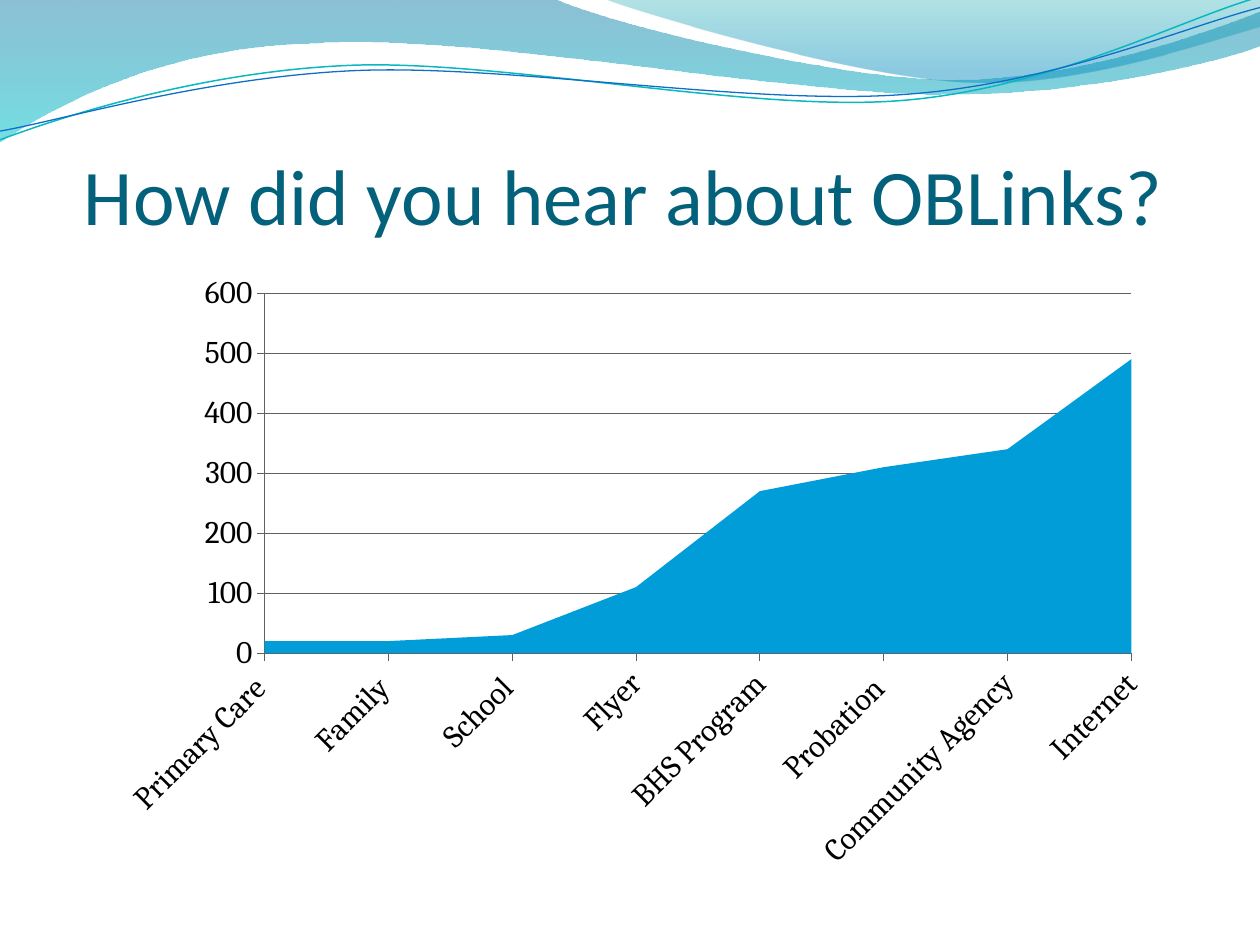
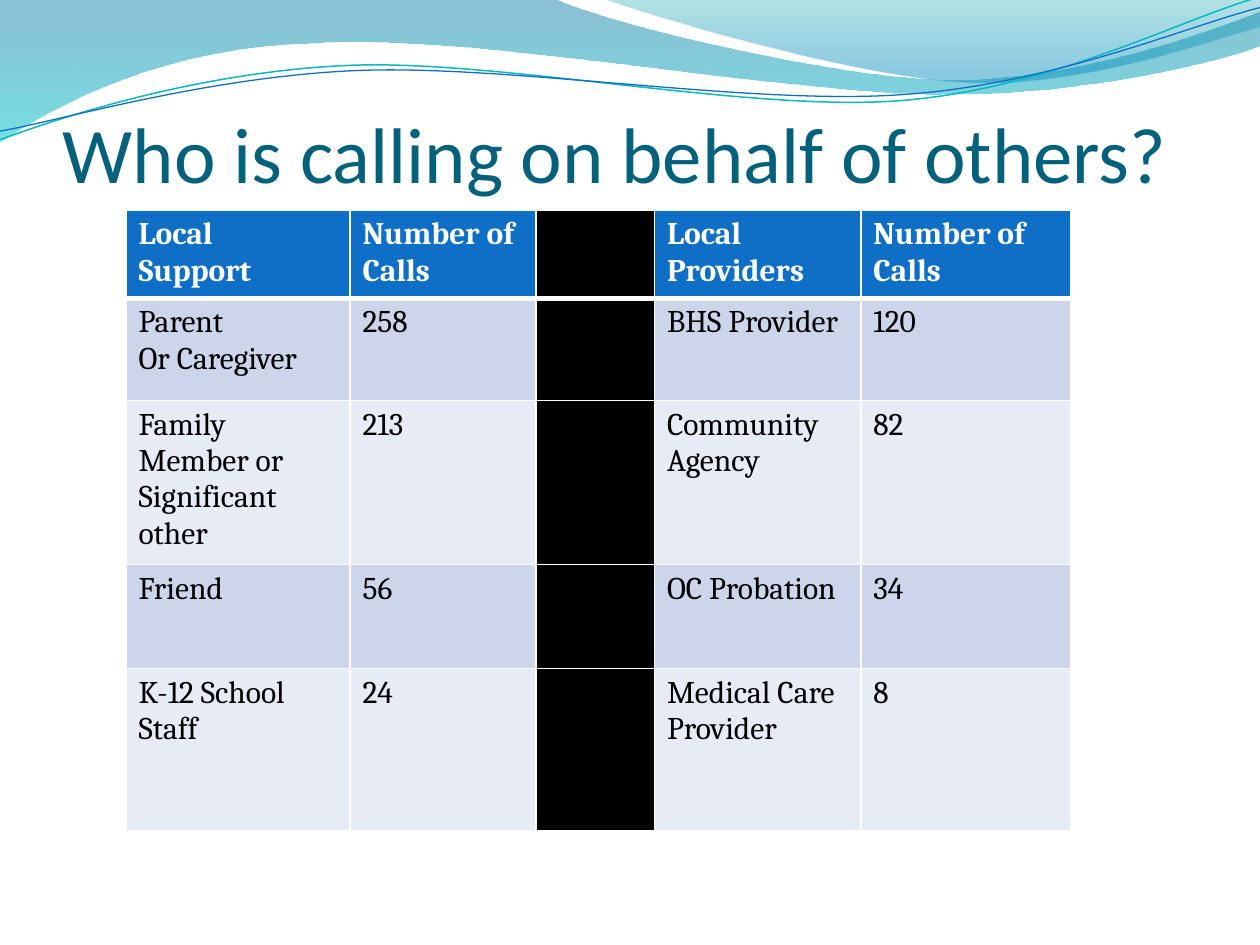
from lxml import etree
from pptx import Presentation
from pptx.chart.data import CategoryChartData
from pptx.dml.color import RGBColor
from pptx.enum.chart import XL_CHART_TYPE, XL_TICK_MARK
from pptx.enum.text import MSO_ANCHOR
from pptx.oxml import parse_xml
from pptx.oxml.ns import nsdecls, qn
from pptx.util import Pt

AREA = XL_CHART_TYPE.AREA
TICK_OUTSIDE = XL_TICK_MARK.OUTSIDE
ANCHOR_BOTTOM = MSO_ANCHOR.BOTTOM

WHITE = RGBColor(0xFF, 0xFF, 0xFF)
BLACK = RGBColor(0x00, 0x00, 0x00)
TITLE_TEAL = RGBColor(0x04, 0x61, 0x7B)
HEADER_BLUE = RGBColor(0x0F, 0x6F, 0xC6)
AREA_BLUE = RGBColor(0x00, 0x9D, 0xD9)
AXIS_GRAY = RGBColor(0x60, 0x60, 0x60)
LINE_TEAL = RGBColor(0x0A, 0xB8, 0xBF)
ROW_FILLS = (RGBColor(0xCC, 0xD5, 0xEA), RGBColor(0xE7, 0xEB, 0xF5))

TITLE_FORMAT = {"name": "Calibri", "size": Pt(45)}
BODY_FORMAT = {"name": "Cambria", "size": Pt(18)}

SLIDE_BOX = (0, 0, 720, 540)

# Outlines start with a point; two numbers make a line, six a Bézier curve.
# Gradient stops are (position, colour, opacity in percent).
WAVE_BANDS = (
    (
        [(0, 0), (316.8, -0.7),
         (342.7, 12.2, 478.1, 45.4, 545.8, 45.4),
         (614.2, 45.4, 689.8, 18.7, 720, 6.5), (720.7, 25.9),
         (707.8, 31.7, 626.4, 54.7, 537.1, 54),
         (447.8, 54, 275, 20.2, 185, 24.5),
         (92.9, 25.9, 33.1, 59.8, -0.7, 81.4)],
        ((0, RGBColor(0x00, 0x74, 0xA1), 45), (1, RGBColor(0x00, 0xC6, 0xCF), 55)),
    ),
    (
        [(344.9, -0.7),
         (366.5, 7.9, 491, 44.6, 553.7, 46.8),
         (616.3, 49.7, 691.9, 23, 720, 15.1), (720, 0)],
        ((0, RGBColor(0x00, 0xA1, 0xA9), 30), (0.8, RGBColor(0x00, 0x8B, 0xBF), 45)),
    ),
)
WAVE_LINES = (
    (
        [(0, 79.9),
         (34.6, 67, 113.8, 41, 199.4, 37.4),
         (284.4, 33.8, 427, 64.1, 513.4, 57.6),
         (599.8, 51.1, 675.4, 10.8, 718.6, -1.4)],
        LINE_TEAL, 0.85,
    ),
    (
        [(0, 74.9),
         (33.8, 69.1, 118.1, 43.9, 203.8, 40.3),
         (290.2, 36.7, 429.8, 60.5, 516.2, 54),
         (601.9, 48.2, 677.5, 15.1, 720, 4.3)],
        HEADER_BLUE, 0.75,
    ),
)

REFERRALS = {
    "Primary Care ": 20, "Family ": 20, "School ": 30, "Flyer": 110,
    "BHS Program": 270, "Probation ": 310, "Community Agency": 340, "Internet": 490,
}
CALLERS = (
    ("Local\nSupport", "Number of Calls", "", "Local Providers", "Number of Calls"),
    ("Parent\nOr Caregiver", "258", "", "BHS Provider", "120"),
    ("Family Member or Significant other", "213", "", "Community Agency", "82"),
    ("Friend", "56", "", "OC Probation", "34"),
    ("K-12 School Staff", "24", "", "Medical Care Provider", "8"),
)
DIVIDER_COLUMN = 2
COLUMN_SHARES = (1.78, 1.48, 0.94, 1.64, 1.67)
ROW_SHARES = (48.5, 58.5, 92, 59.5, 92.5)


def apply_format(font, values, color):
    for key, value in values.items():
        setattr(font, key, value)
    font.color.rgb = color


def add_outline(slide, box, outline, close):
    """Lay the outline through all its points, then bend each triple into a curve."""
    left, top = box[:2]
    points = [
        (Pt(left + x), Pt(top + y))
        for segment in outline
        for x, y in zip(segment[::2], segment[1::2])
    ]
    builder = slide.shapes.build_freeform(*points[0])
    builder.add_line_segments(points[1:], close=close)
    shape = builder.convert_to_shape()
    shape.shadow.inherit = False

    track = next(shape._element.iter(qn("a:path")))
    steps = iter(track.findall(qn("a:lnTo")))
    for segment in outline[1:]:
        curve = next(steps)
        if len(segment) == 6:
            curve.tag = qn("a:cubicBezTo")
            for step in (next(steps), next(steps)):
                curve.append(step[0])
                track.remove(step)
    return shape


def add_waves(slide, box):
    for outline, stops in WAVE_BANDS:
        band = add_outline(slide, box, outline, close=True)
        band.line.fill.background()
        band.fill.gradient()
        band.fill.gradient_angle = 270
        for stop, (position, color, _) in zip(band.fill.gradient_stops, stops):
            stop.position = position
            stop.color.rgb = color
        colors = band._element.spPr.iter(qn("a:srgbClr"))
        for color, (_, _, opacity) in zip(colors, stops):
            etree.SubElement(color, qn("a:alpha"), val=str(opacity * 1000))
    for outline, color, width in WAVE_LINES:
        wave = add_outline(slide, box, outline, close=False)
        wave.fill.background()
        wave.line.color.rgb = color
        wave.line.width = Pt(width)


def add_title(slide, box, text):
    frame = slide.shapes.add_textbox(*map(Pt, box)).text_frame
    layout = {
        "word_wrap": True, "vertical_anchor": ANCHOR_BOTTOM,
        "margin_left": 0, "margin_right": 0, "margin_top": Pt(3.6), "margin_bottom": 0,
    }
    for key, value in layout.items():
        setattr(frame, key, value)
    run = frame.paragraphs[0].add_run()
    run.text = text
    apply_format(run.font, TITLE_FORMAT, TITLE_TEAL)


def add_referral_chart(slide, box):
    data = CategoryChartData()
    data.categories = list(REFERRALS)
    data.add_series("Series 1", list(REFERRALS.values()))
    chart = slide.shapes.add_chart(AREA, *map(Pt, box), data).chart
    chart.has_legend = False
    chart.has_title = False
    apply_format(chart.font, BODY_FORMAT, BLACK)
    plot = chart.plots[0]
    plot.vary_by_categories = False
    area = plot.series[0].format
    area.fill.solid()
    area.fill.fore_color.rgb = AREA_BLUE

    counts, sources = chart.value_axis, chart.category_axis
    counts.minimum_scale, counts.maximum_scale, counts.major_unit = 0, 600, 100
    counts.has_major_gridlines = True
    for axis in (counts, sources):
        axis.major_tick_mark = TICK_OUTSIDE
        apply_format(axis.tick_labels.font, BODY_FORMAT, BLACK)
    for part in (counts, sources, counts.major_gridlines):
        part.format.line.color.rgb = AXIS_GRAY
        part.format.line.width = Pt(0.5)
    sources._element.find(qn("c:txPr")).find(qn("a:bodyPr")).set("rot", "-2700000")
    counts._element.find(qn("c:crossBetween")).set("val", "midCat")


def add_borders(cell, widths):
    """Draw white cell borders; widths maps a side (L, R, T, B) to points."""
    properties = cell._tc.get_or_add_tcPr()
    for side, width in widths.items():
        properties.append(parse_xml(
            f'<a:ln{side} {nsdecls("a")} w="{Pt(width)}"><a:solidFill>'
            f'<a:srgbClr val="{WHITE}"/></a:solidFill></a:ln{side}>'
        ))


def add_caller_table(slide, box):
    width, height = box[2:]
    table = slide.shapes.add_table(
        len(CALLERS), len(CALLERS[0]), *map(Pt, box)
    ).table
    for column, share in zip(table.columns, COLUMN_SHARES):
        column.width = Pt(width * share / sum(COLUMN_SHARES))
    for row, share in zip(table.rows, ROW_SHARES):
        row.height = Pt(height * share / sum(ROW_SHARES))
    for r, texts in enumerate(CALLERS):
        header = r == 0
        row_fill = HEADER_BLUE if header else ROW_FILLS[(r - 1) % 2]
        borders = {"L": 1, "R": 1, "T": 3 if r == 1 else 1, "B": 3 if header else 1}
        for c, text in enumerate(texts):
            cell = table.cell(r, c)
            cell.text = text
            for paragraph in cell.text_frame.paragraphs:
                for run in paragraph.runs:
                    apply_format(run.font, {**BODY_FORMAT, "bold": header},
                                 WHITE if header else BLACK)
            add_borders(cell, borders)
            cell.fill.solid()
            cell.fill.fore_color.rgb = BLACK if c == DIVIDER_COLUMN else row_fill


def add_wave_slide(deck, title, title_box):
    slide = deck.slides.add_slide(deck.slide_layouts[6])
    add_waves(slide, SLIDE_BOX)
    add_title(slide, title_box, title)
    return slide


def main():
    deck = Presentation()
    deck.slide_width, deck.slide_height = map(Pt, SLIDE_BOX[2:])
    referrals = add_wave_slide(deck, "How did you hear about OBLinks?", (48, 48, 648, 90))
    add_referral_chart(referrals, (60, 150, 606, 354))
    callers = add_wave_slide(deck, "Who is calling on behalf of others?", (36, 24, 648, 90))
    add_caller_table(callers, (72, 120, 540, 351))
    deck.save("out.pptx")


if __name__ == "__main__":
    main()
